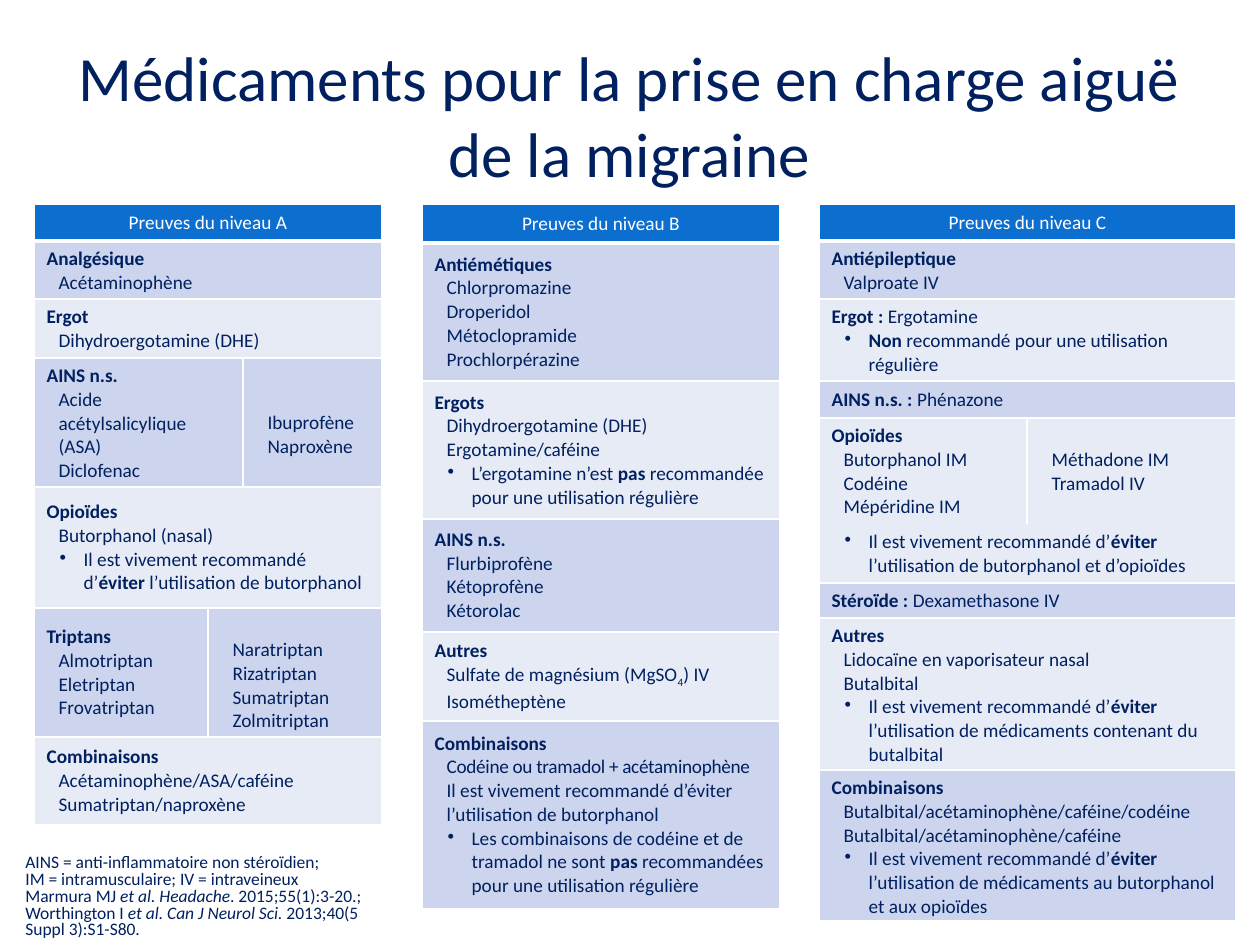
from dataclasses import dataclass

from lxml import etree
from pptx import Presentation
from pptx.dml.color import RGBColor
from pptx.enum.text import MSO_ANCHOR, PP_ALIGN
from pptx.oxml.ns import qn
from pptx.util import Emu, Pt

CENTER = PP_ALIGN.CENTER
LEFT = PP_ALIGN.LEFT
TOP = MSO_ANCHOR.TOP
MIDDLE = MSO_ANCHOR.MIDDLE

PX = 914400 / 126
COLORS = {"navy": "002060", "header": "0C6FCF", "tint": "CCD5ED", "pale": "E7EBF6", "white": "FFFFFF"}
BODY = {"size": Pt(11), "name": "Calibri", "bold": False}
TITLE = {"size": Pt(36), "name": "Calibri"}
NOTE = {"size": Pt(10), "name": "Calibri"}
MARKS = {"*": {"b": "1"}, "_": {"i": "1"}, "~": {"baseline": "-25000"}, "^": {"spc": "-20"}}
BLANK_LINE = 24
AVOID = "• Il est vivement recommandé d’*éviter* l’utilisation de "


@dataclass
class Row:
    height: int
    cells: list
    anchor: int = MIDDLE
    joins_next: bool = False
    joins_previous: bool = False


def px(length):
    return Emu(round(length * PX))


def rgb(name):
    return RGBColor.from_string(COLORS[name])


def add_spans(para, text, formats, color):
    mark = next((key for key in MARKS if key in text), "*")
    for index, piece in enumerate(text.split(mark)):
        for line_number, line in enumerate(piece.split("\n")):
            if line_number:
                para.add_line_break()
            if not line:
                continue
            span = para.add_run()
            span.text = line
            for name, value in formats.items():
                setattr(span.font, name, value)
            span.font.color.rgb = rgb(color)
            if index % 2:
                for name, value in MARKS[mark].items():
                    span._r.get_or_add_rPr().set(name, value)


def write_lines(frame, lines, formats, color="navy", align=LEFT, spacing=None):
    for index, line in enumerate(lines):
        para = frame.paragraphs[0] if index == 0 else frame.add_paragraph()
        para.alignment = align
        para.line_spacing = spacing
        add_spans(para, line, formats, color)


def indent_cell(frame, lines):
    for para, line in zip(frame.paragraphs, lines):
        properties = para._p.get_or_add_pPr()
        if line.startswith("• "):
            properties.set("marL", str(px(37)))
            properties.set("indent", str(px(-24)))
            etree.SubElement(properties, qn("a:buChar")).set("char", "•")
        elif not line.startswith("*"):
            properties.set("marL", str(px(12)))


def set_borders(cell, top, bottom):
    properties = cell._tc.get_or_add_tcPr()
    for side, width in {"L": 1, "R": 1, "T": top, "B": bottom}.items():
        line = etree.SubElement(properties, qn(f"a:ln{side}"))
        line.set("w", str(Pt(width)))
        if width:
            fill = etree.SubElement(line, qn("a:solidFill"))
            etree.SubElement(fill, qn("a:srgbClr")).set("val", COLORS["white"])
        else:
            etree.SubElement(line, qn("a:noFill"))


def add_evidence_table(page, box, widths, header_height, heading, rows):
    left, top = box
    rows = [Row(header_height, [(len(widths), [heading])])] + rows
    height = sum(row.height for row in rows)
    table = page.shapes.add_table(
        len(rows), len(widths), px(left), px(top), px(sum(widths)), px(height)
    ).table
    table.first_row = table.horz_banding = False
    for column, width in zip(table.columns, widths):
        column.width = px(width)
    fill = "header"
    for row_index, row in enumerate(rows):
        table.rows[row_index].height = px(row.height)
        if row_index and not row.joins_previous:
            fill = "pale" if fill == "tint" else "tint"
        top_width = 0 if row.joins_previous else 3 if row_index == 1 else 1
        bottom_width = 0 if row.joins_next else 3 if row_index == 0 else 1
        for column_index in range(len(widths)):
            cell = table.cell(row_index, column_index)
            set_borders(cell, top_width, bottom_width)
            cell.fill.solid()
            cell.fill.fore_color.rgb = rgb(fill)
        start = 0
        for span_count, lines in row.cells:
            cell = table.cell(row_index, start)
            if span_count > 1:
                cell.merge(table.cell(row_index, start + span_count - 1))
            cell.vertical_anchor = row.anchor
            cell.margin_top = px(6 + (BLANK_LINE if start else 0))
            cell.margin_bottom = px(6)
            if row_index == 0:
                write_lines(cell.text_frame, lines, BODY, "white", CENTER)
            else:
                write_lines(cell.text_frame, lines, BODY)
                indent_cell(cell.text_frame, [line for line in lines])
            start += span_count


def add_text(page, box, lines, formats, anchor=TOP, align=LEFT, spacing=None):
    frame = page.shapes.add_textbox(*map(px, box)).text_frame
    frame.word_wrap = True
    frame.vertical_anchor = anchor
    write_lines(frame, lines, formats, "navy", align, spacing)


LEVEL_A = [
    Row(58, [(3, ["*Analgésique*", "Acétaminophène"])]),
    Row(59, [(3, ["*Ergot*", "Dihydroergotamine (DHE)"])]),
    Row(129, [(2, ["*AINS n.s.*", "Acide acétylsalicylique (ASA)", "Diclofenac"]),
              (1, ["Ibuprofène", "Naproxène"])]),
    Row(121, [(3, ["*Opioïdes*", "Butorphanol (nasal)", AVOID + "butorphanol"])]),
    Row(129, [(1, ["*Triptans*", "Almotriptan", "Eletriptan", "Frovatriptan"]),
              (2, ["Naratriptan", "Rizatriptan", "Sumatriptan", "Zolmitriptan"])]),
    Row(88, [(3, ["*Combinaisons*", "Acétaminophène/ASA/caféine", "Sumatriptan/naproxène"])]),
]
LEVEL_B = [
    Row(138, [(1, ["*Antiémétiques*", "Chlorpromazine", "Droperidol", "Métoclopramide", "Prochlorpérazine"])]),
    Row(138, [(1, ["*Ergots*", "Dihydroergotamine (DHE)", "Ergotamine/caféine",
                   "• L’ergotamine n’est *pas* recommandée pour une utilisation régulière"])]),
    Row(113, [(1, ["*AINS n.s.*", "Flurbiprofène", "Kétoprofène", "Kétorolac"])]),
    Row(89, [(1, ["*Autres*", "Sulfate de magnésium (MgSO~4~) IV", "Isométheptène"])]),
    Row(188, [(1, ["*Combinaisons*", "^Codéine ou tramadol + acétaminophène^",
                   "Il est vivement recommandé d’éviter l’utilisation de butorphanol",
                   "• Les combinaisons de codéine et de tramadol ne sont *pas* recommandées "
                   "pour une utilisation régulière"])]),
]
LEVEL_C = [
    Row(58, [(2, ["*Antiépileptique*", "Valproate IV"])]),
    Row(82, [(2, ["*Ergot : *Ergotamine", "• *Non *recommandé pour une utilisation régulière"])]),
    Row(37, [(2, ["*AINS n.s. : *Phénazone"])]),
    Row(106, [(1, ["*Opioïdes*", "Butorphanol IM", "Codéine", "Mépéridine IM"]),
              (1, ["Méthadone IM", "Tramadol IV"])], TOP, joins_next=True),
    Row(59, [(2, [AVOID + "butorphanol et d’opioïdes"])], TOP, joins_previous=True),
    Row(35, [(2, ["*Stéroïde : *Dexamethasone IV"])]),
    Row(152, [(2, ["*Autres*", "Lidocaïne en vaporisateur nasal", "Butalbital",
                   AVOID + "médicaments contenant du butalbital"])]),
    Row(151, [(2, ["*Combinaisons*", "Butalbital/acétaminophène/caféine/codéine",
                   "Butalbital/acétaminophène/caféine",
                   AVOID + "médicaments au butorphanol et aux opioïdes"])]),
]
FOOTNOTE = [
    "AINS = anti-inflammatoire non stéroïdien;\nIM = intramusculaire; IV = intraveineux",
    "Marmura MJ _et al. Headache_. 2015;55(1):3-20.; Worthington I "
    "_et al. Can J Neurol Sci. _2013;40(5 Suppl 3):S1-S80.",
]


def strip_bullet_marks(page):
    for shape in page.shapes:
        if not shape.has_table:
            continue
        for cell in shape.table.iter_cells():
            for para in cell.text_frame.paragraphs:
                if para.text.startswith("• "):
                    span = para.runs[0]
                    span.text = span.text[2:]
                    if not span.text:
                        para._p.remove(span._r)


def main():
    deck = Presentation()
    deck.slide_width, deck.slide_height = px(1260), px(945)
    page = deck.slides.add_slide(deck.slide_layouts[6])
    add_text(page, (62, 35, 1134, 158), ["Médicaments pour la prise en charge aiguë de la migraine"],
             TITLE, MIDDLE, CENTER)
    add_text(page, (13, 849, 398, 97), FOOTNOTE, NOTE, spacing=0.8)
    add_evidence_table(page, (34, 204), [174, 35, 139], 37, "Preuves du niveau A", LEVEL_A)
    add_evidence_table(page, (422, 204), [358], 39, "Preuves du niveau B", LEVEL_B)
    add_evidence_table(page, (819, 204), [208, 209], 37, "Preuves du niveau C", LEVEL_C)
    strip_bullet_marks(page)
    deck.save("out.pptx")


if __name__ == "__main__":
    main()
